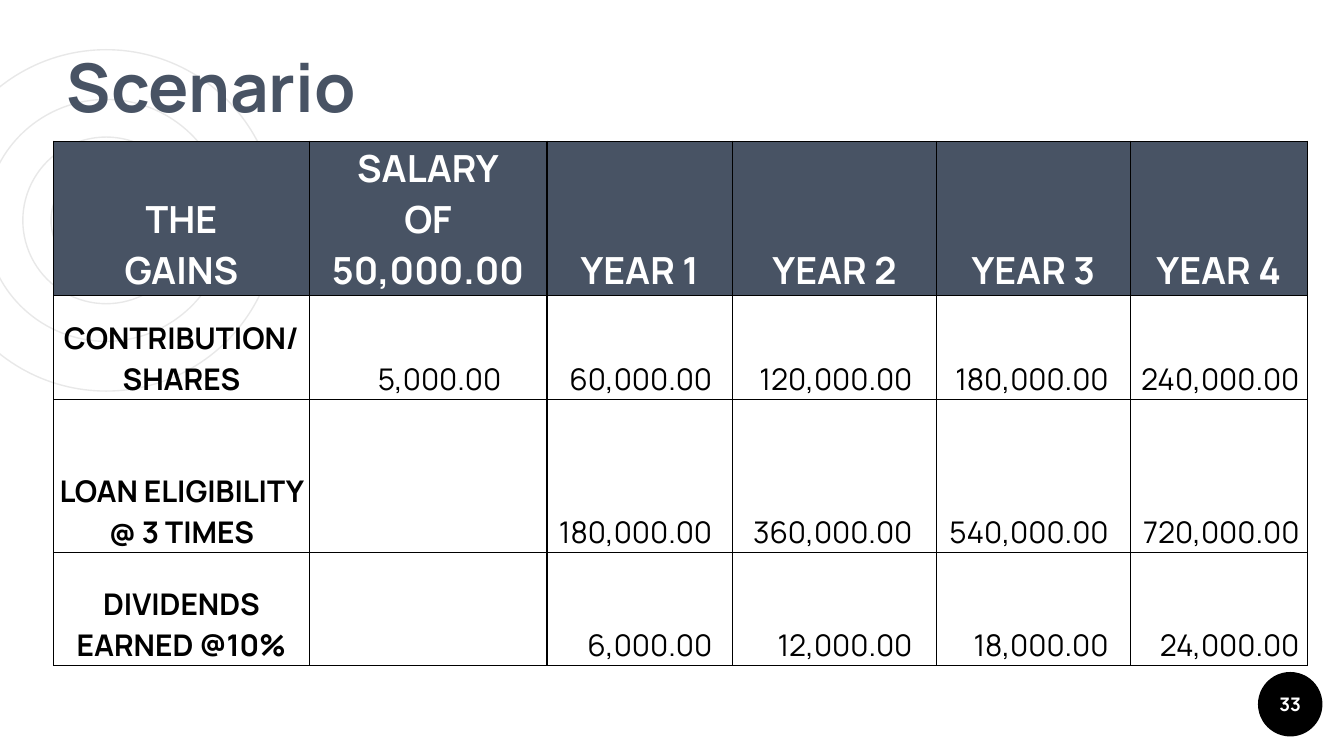
from dataclasses import dataclass

from lxml import etree
from pptx import Presentation
from pptx.dml.color import RGBColor
from pptx.enum.shapes import MSO_SHAPE
from pptx.enum.text import MSO_ANCHOR, PP_ALIGN
from pptx.oxml.ns import qn
from pptx.util import Inches, Pt

OVAL = MSO_SHAPE.OVAL
BOTTOM, MIDDLE = MSO_ANCHOR.BOTTOM, MSO_ANCHOR.MIDDLE
LEFT, CENTER, RIGHT = PP_ALIGN.LEFT, PP_ALIGN.CENTER, PP_ALIGN.RIGHT


@dataclass(frozen=True)
class Theme:
    font: str = "Manrope"
    slate: str = "485364"
    ring: str = "E8E8E8"
    black: str = "000000"
    white: str = "FFFFFF"
    title_size: int = 36
    header_size: int = 20
    body_size: int = 16
    number_size: int = 10
    line_width: float = 0.75


THEME = Theme()

PAGE_WIDTH = 10
PAGE_HEIGHT = PAGE_WIDTH * 9 / 16

RING_CENTER = (0.79, 1.64)
RING_DIAMETERS = [2.54, 1.8, 1.24, 0.82]

COLUMN_WIDTHS = [1.9, 1.77, 1.38, 1.52, 1.44, 1.32]
ROW_HEIGHTS = [1.15, 0.77, 1.14, 0.84]
# Space to the right of the figures in each column
FIGURE_INSETS = [0.01, 0.34, 0.15, 0.18, 0.16, 0.06]
GAINS = [
    ["THE\nGAINS", "SALARY\nOF 50,000.00", "YEAR 1", "YEAR 2", "YEAR 3", "YEAR 4"],
    ["CONTRIBUTION/SHARES", "5,000.00", "60,000.00", "120,000.00", "180,000.00", "240,000.00"],
    ["LOAN ELIGIBILITY @ 3 TIMES", "", "180,000.00", "360,000.00", "540,000.00", "720,000.00"],
    ["DIVIDENDS EARNED @10%", "", "6,000.00", "12,000.00", "18,000.00", "24,000.00"],
]


def format_text(text_frame, size, color, bold=True, align=LEFT):
    for para in text_frame.paragraphs:
        para.alignment = align
        para.font.size = Pt(size)
        for span in para.runs:
            span.font.name = THEME.font
            span.font.size = Pt(size)
            span.font.bold = bold
            span.font.color.rgb = RGBColor.from_string(color)


def add_circle(page, center_x, center_y, diameter):
    circle = page.shapes.add_shape(
        OVAL,
        Inches(center_x - diameter / 2), Inches(center_y - diameter / 2),
        Inches(diameter), Inches(diameter),
    )
    circle.shadow.inherit = False
    return circle


def add_rings(page):
    for diameter in RING_DIAMETERS:
        ring = add_circle(page, *RING_CENTER, diameter)
        ring.fill.background()
        ring.line.color.rgb = RGBColor.from_string(THEME.ring)
        ring.line.width = Pt(THEME.line_width)


def add_title(page, text):
    box = page.shapes.add_textbox(Inches(0.4), Inches(0.29), Inches(5.71), Inches(0.75))
    frame = box.text_frame
    frame.word_wrap = True
    frame.vertical_anchor = BOTTOM
    frame.margin_left = frame.margin_right = Inches(0.1)
    frame.margin_top = frame.margin_bottom = Inches(0.1)
    frame.text = text
    format_text(frame, THEME.title_size, THEME.slate)


def add_page_number(page, text):
    badge = add_circle(page, 9.6, 5.24, 0.48)
    badge.fill.solid()
    badge.fill.fore_color.rgb = RGBColor.from_string(THEME.black)
    badge.line.fill.background()
    frame = badge.text_frame
    frame.margin_left = frame.margin_right = 0
    frame.margin_top = frame.margin_bottom = 0
    frame.vertical_anchor = MIDDLE
    frame.text = text
    format_text(frame, THEME.number_size, THEME.white, align=CENTER)


def set_borders(cell):
    properties = cell._tc.get_or_add_tcPr()
    for side in ("a:lnL", "a:lnR", "a:lnT", "a:lnB"):
        line = etree.SubElement(properties, qn(side), w=str(Pt(THEME.line_width)))
        fill = etree.SubElement(line, qn("a:solidFill"))
        etree.SubElement(fill, qn("a:srgbClr"), val=THEME.black)


def fill_cell(cell, text, row, column):
    is_header, is_label = row == 0, column == 0
    is_figure = not (is_header or is_label)
    set_borders(cell)
    if is_header:
        cell.fill.solid()
        cell.fill.fore_color.rgb = RGBColor.from_string(THEME.slate)
    else:
        cell.fill.background()
    cell.vertical_anchor = BOTTOM
    cell.margin_left = cell.margin_top = Inches(0.01)
    cell.margin_right = Inches(FIGURE_INSETS[column] if is_figure else 0.01)
    cell.margin_bottom = 0
    cell.text_frame.text = text
    format_text(
        cell.text_frame,
        THEME.header_size if is_header else THEME.body_size,
        THEME.white if is_header else THEME.black,
        bold=not is_figure,
        align=RIGHT if is_figure else CENTER,
    )


def add_gains_table(page):
    table = page.shapes.add_table(
        len(ROW_HEIGHTS), len(COLUMN_WIDTHS), Inches(0.4), Inches(1.05),
        Inches(sum(COLUMN_WIDTHS)), Inches(sum(ROW_HEIGHTS)),
    ).table
    table.horz_banding = False
    for column, width in zip(table.columns, COLUMN_WIDTHS):
        column.width = Inches(width)
    for row, height in zip(table.rows, ROW_HEIGHTS):
        row.height = Inches(height)
    for row, texts in enumerate(GAINS):
        for column, text in enumerate(texts):
            fill_cell(table.cell(row, column), text, row, column)


def main():
    deck = Presentation()
    deck.slide_width, deck.slide_height = Inches(PAGE_WIDTH), Inches(PAGE_HEIGHT)
    page = deck.slides.add_slide(deck.slide_layouts[6])

    # Background decoration
    add_rings(page)
    # Content
    add_title(page, "Scenario")
    add_gains_table(page)
    # Footer
    add_page_number(page, "33")

    deck.save("out.pptx")


if __name__ == "__main__":
    main()
